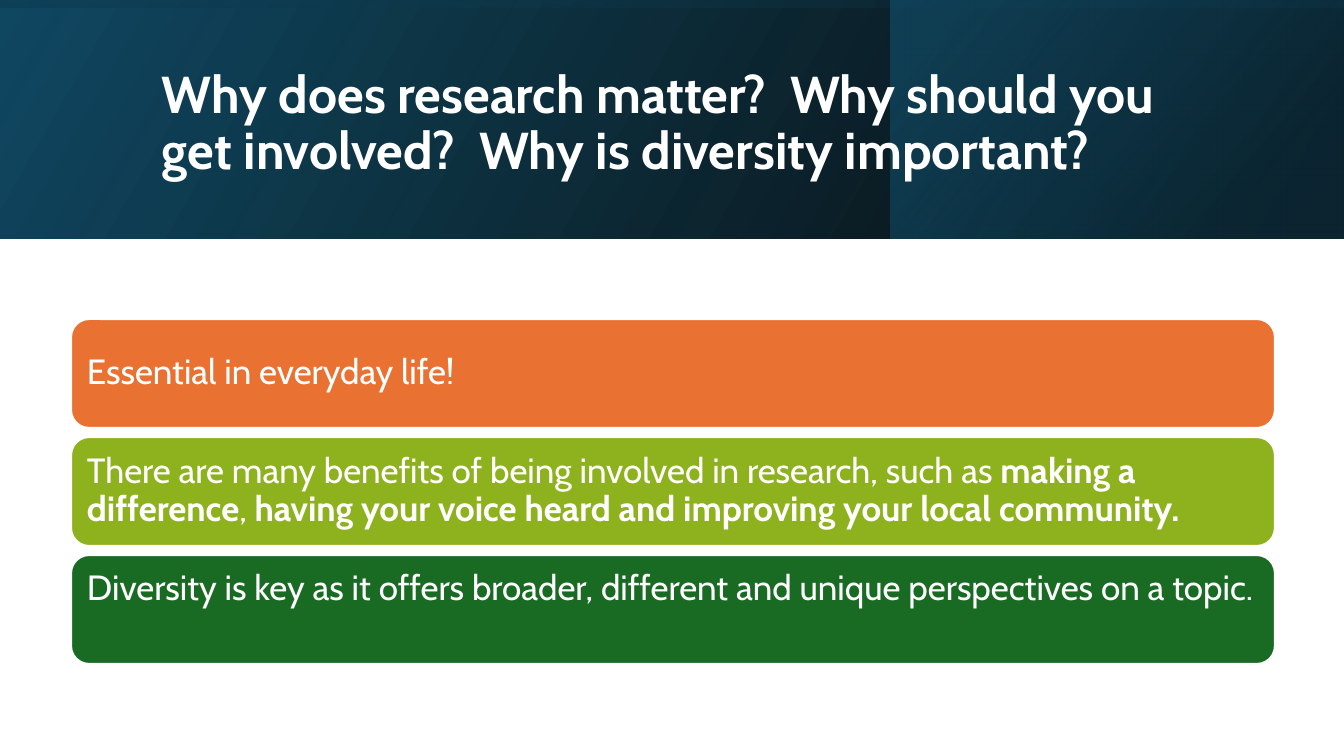
from pptx import Presentation
from pptx.dml.color import RGBColor
from pptx.enum.shapes import MSO_SHAPE as SHAPE
from pptx.enum.text import MSO_ANCHOR as ANCHOR
from pptx.oxml import parse_xml
from pptx.oxml.ns import nsdecls
from pptx.util import Emu, Pt

PX = 914400 / 100.8
FONT = "Cabin"
COLORS = {
    "white": "FFFFFF", "black": "000000", "navy": "104862",
    "deep": "0B3041", "teal": "156082",
    "orange": "E97132", "lime": "8EB21E", "green": "196B24",
}


def px(*lengths):
    """Turn pixel lengths into EMU."""
    return [Emu(round(length * PX)) for length in lengths]


def add_text(page, frame, inset, anchor, size, spans):
    """Add a one-paragraph text box from (text, bold) spans."""
    box = page.shapes.add_textbox(*px(*frame))
    text = box.text_frame
    text.word_wrap = True
    text.vertical_anchor = anchor
    text.margin_left, text.margin_right = px(10, 10)
    text.margin_top, text.margin_bottom = px(inset, inset)
    para = text.paragraphs[0]
    para.line_spacing = 0.9
    for words, bold in spans:
        span = para.add_run()
        span.text = words
        span.font.name = FONT
        span.font.size = Pt(size)
        span.font.bold = bold
        span.font.color.rgb = RGBColor.from_string(COLORS["white"])


deck = Presentation()
deck.slide_width, deck.slide_height = px(1344, 756)
page = deck.slides.add_slide(deck.slide_layouts[6])

# Banner: frame, rotation, gradient angle, stops of (position, colour, opacity)
banner_layers = [
    ((0, 0, 1344, 239), 0, 330, [(0, "black", 96), (100, "navy", 100)]),
    ((891, 0, 452, 239), 0, 320, [(19, "deep", 68), (100, "teal", 48)]),
    ((552, -552, 239, 1344), 270, 350, [(23, "navy", 16), (99, "black", 45)]),
]
for frame, rotation, angle, stops in banner_layers:
    layer = page.shapes.add_shape(SHAPE.RECTANGLE, *px(*frame))
    layer.shadow.inherit = False
    layer.line.fill.background()
    layer.rotation = rotation
    properties = layer._element.spPr
    properties.xfrm.set("flipH", "1")
    stop_xml = "".join(
        f'<a:gs pos="{position * 1000}"><a:srgbClr val="{COLORS[color]}">'
        f'<a:alpha val="{opacity * 1000}"/></a:srgbClr></a:gs>'
        for position, color, opacity in stops
    )
    properties.prstGeom.addnext(parse_xml(
        f'<a:gradFill {nsdecls("a")} rotWithShape="1"><a:gsLst>{stop_xml}</a:gsLst>'
        f'<a:lin ang="{angle * 60000}" scaled="0"/></a:gradFill>'
    ))

title = ("Why does research matter?  Why should you get involved?  "
         "Why is diversity important?")
add_text(page, (152, 38, 1072, 173), 5, ANCHOR.MIDDLE, 37, [(title, True)])

reasons = [
    ("orange", ANCHOR.MIDDLE, [("Essential in everyday life!", False)]),
    ("lime", ANCHOR.MIDDLE, [
        ("There are many benefits of being involved in research, such as ", False),
        ("making a difference", True),
        (", ", False),
        ("having your voice heard and improving your local community.", True),
    ]),
    ("green", ANCHOR.TOP, [
        ("Diversity is key as it offers broader, different and unique "
         "perspectives on a topic.", False),
    ]),
]
for row, (color, anchor, spans) in enumerate(reasons):
    top = 319 + row * 118
    card = page.shapes.add_shape(SHAPE.ROUNDED_RECTANGLE, *px(71, top, 1204, 109))
    card.shadow.inherit = False
    card.fill.solid()
    card.fill.fore_color.rgb = RGBColor.from_string(COLORS[color])
    card.line.color.rgb = RGBColor.from_string(COLORS["white"])
    card.line.width = Pt(1.5)
    add_text(page, (77, top + 5, 1193, 99), 10, anchor, 25, spans)

deck.save("out.pptx")
